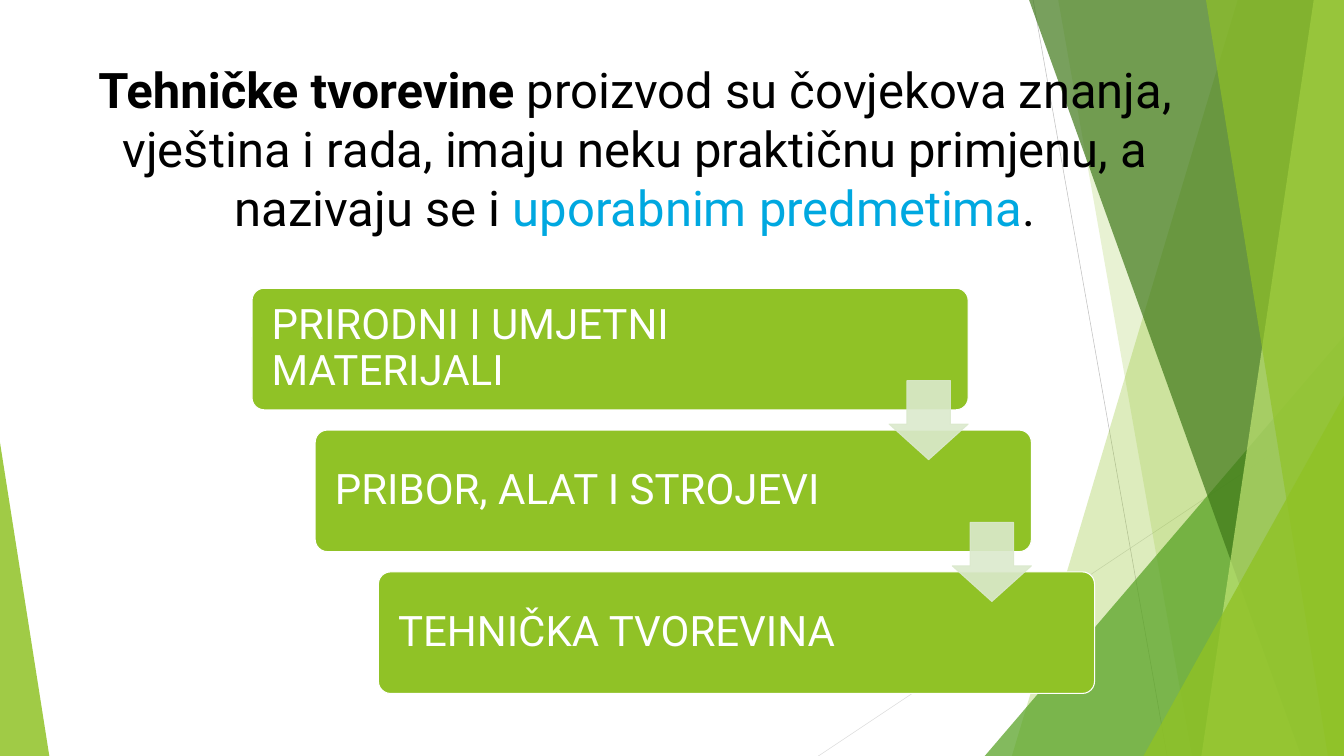
from lxml import etree
from pptx import Presentation
from pptx.dml.color import RGBColor
from pptx.enum.shapes import MSO_CONNECTOR, MSO_SHAPE
from pptx.enum.text import MSO_ANCHOR, MSO_AUTO_SIZE, PP_ALIGN
from pptx.oxml.ns import qn
from pptx.util import Inches, Pt

LINE = MSO_CONNECTOR.STRAIGHT
WEDGE = MSO_SHAPE.ISOSCELES_TRIANGLE
ROUND = MSO_SHAPE.ROUNDED_RECTANGLE
ARROW = MSO_SHAPE.DOWN_ARROW
MIDDLE, TOP = MSO_ANCHOR.MIDDLE, MSO_ANCHOR.TOP
LEFT, CENTER = PP_ALIGN.LEFT, PP_ALIGN.CENTER

WHITE = RGBColor(0xFF, 0xFF, 0xFF)
BLACK = RGBColor(0x00, 0x00, 0x00)
BLUE = RGBColor(0x00, 0xA8, 0xE0)
LIME = RGBColor(0x90, 0xC2, 0x26)
LEAF = RGBColor(0x54, 0xA0, 0x21)
MOSS = RGBColor(0x3F, 0x78, 0x19)
PALE = RGBColor(0xC0, 0xE4, 0x74)
MIST = RGBColor(0xDB, 0xE9, 0xCD)
GRAY = RGBColor(0xBF, 0xBF, 0xBF)
SILVER = RGBColor(0xD9, 0xD9, 0xD9)

FONT = "Roboto"
W, H = Inches(26.67), Inches(15)

# Rays: start x, start y, end x, end y in % of the box
RAYS = [(76.87, 0, 86.84, 100, GRAY), (100, 53.67, 60.89, 100, SILVER)]
# Facets reach the right edge: x at the top, x at the foot, colour, opacity
# Wedges stand on the foot: left, top, width, apex, colour, opacity
FACETS = [
    (92.09, 75.29, LIME, 30),
    (78.74, 88.68, LIME, 20),
    (73.27, 44.47, 26.73, 1, LEAF, 72),
    (76.57, 96.81, MOSS, 70),
    (97.75, 89.39, PALE, 70),
    (89.73, 98.8, LIME, 65),
    (85.08, 52.33, 14.92, 1, LIME, 80),
    (0, 58.53, 3.67, 0, LIME, 85),
]
CLAIM = [
    ("Tehničke tvorevine ", BLACK, True),
    ("proizvod su čovjekova znanja, vještina i rada, imaju neku praktičnu "
     "primjenu, a nazivaju se i ", BLACK, False),
    ("uporabnim predmetima", BLUE, False),
    (".", BLACK, False),
]
STEPS = ["PRIRODNI I UMJETNI MATERIJALI", "PRIBOR, ALAT I STROJEVI",
         "TEHNIČKA TVOREVINA"]


def part(box, x, y, w, h):
    """Return the part of a box that is given in % of its size."""
    left, top, wide, high = box
    return (int(left + wide * x / 100), int(top + high * y / 100),
            int(wide * w / 100), int(high * h / 100))


def paint(shape, color, alpha=100, edge=None):
    """Set fill and outline, both with the same opacity."""
    shape.shadow.inherit = False
    shape.fill.solid()
    shape.fill.fore_color.rgb = color
    if edge is None:
        shape.line.fill.background()
    else:
        shape.line.color.rgb = edge
        shape.line.width = Pt(1.5)
    if alpha < 100:
        for tint in shape._element.spPr.iter(qn("a:srgbClr")):
            etree.SubElement(tint, qn("a:alpha"), val=str(alpha * 1000))


def write(para, text, size, color, bold=False):
    run = para.add_run()
    run.text = text
    font = run.font
    font.name, font.size, font.bold = FONT, Pt(size), bold
    font.color.rgb = color


def draw_rays(shapes, box):
    for x1, y1, x2, y2, color in RAYS:
        start = part(box, x1, y1, 0, 0)[:2]
        end = part(box, x2, y2, 0, 0)[:2]
        ray = shapes.add_connector(LINE, *start, *end)
        ray.line.color.rgb = color
        ray.line.width = Pt(0.75)
        etree.SubElement(ray._element.spPr, qn("a:effectLst"))


def draw_facets(shapes, box):
    for *place, color, alpha in FACETS:
        if len(place) == 2:
            head, foot = place
            first, *rest = [part(box, x, y, 0, 0)[:2] for x, y in
                            ((head, 0), (100, 0), (100, 100), (foot, 100))]
            pen = shapes.build_freeform(*first)
            pen.add_line_segments(rest)
            facet = pen.convert_to_shape()
        else:
            x, y, w, apex = place
            facet = shapes.add_shape(WEDGE, *part(box, x, y, w, 100 - y))
            facet.adjustments[0] = apex
        paint(facet, color, alpha)


def place_claim(shapes, box):
    title = shapes.title
    shapes._spTree.append(title._element)  # in front of the facets
    title.left, title.top, title.width, title.height = box
    frame = title.text_frame
    frame.word_wrap = True
    frame.auto_size = MSO_AUTO_SIZE.NONE
    frame.vertical_anchor = TOP
    frame.margin_left = frame.margin_right = Inches(0.05)
    frame.margin_top = frame.margin_bottom = Inches(0.05)
    para = frame.paragraphs[0]
    para.alignment = CENTER
    para.line_spacing = 1.0
    for text, color, bold in CLAIM:
        write(para, text, 70, color, bold)


def draw_steps(shapes, box):
    """Draw a staircase of cards, then the arrows that join them."""
    cards = [part(box, 7.5 * i, 35 * i, 85, 30) for i in range(len(STEPS))]
    for text, (x, y, w, h) in zip(STEPS, cards):
        card = shapes.add_shape(ROUND, x, y, w, h)
        card.adjustments[0] = 0.1
        paint(card, LIME, edge=WHITE)
        frame = card.text_frame
        frame.word_wrap = True
        frame.vertical_anchor = MIDDLE
        frame.margin_left = Inches(0.32)
        frame.margin_right = int(w * 0.2)
        para = frame.paragraphs[0]
        para.alignment = LEFT
        para.line_spacing = 0.9
        write(para, text, 60, WHITE)
    for x, y, w, h in cards[:-1]:
        side = int(h * 0.65)
        arrow = shapes.add_shape(ARROW, x + w - side, y + int(h * 0.76),
                                 side, side)
        arrow.adjustments[0] = 0.55
        arrow.adjustments[1] = 0.45
        paint(arrow, MIST, 90, MIST)


def main():
    deck = Presentation()
    deck.slide_width, deck.slide_height = W, H
    slide = deck.slides.add_slide(deck.slide_layouts[5])
    shapes = slide.shapes
    page = (0, 0, W, H)
    draw_rays(shapes, page)
    draw_facets(shapes, page)
    place_claim(shapes, part(page, 2.96, 7.53, 88.6, 24.27))
    draw_steps(shapes, part(page, 18.75, 38.13, 62.69, 53.6))
    deck.save("out.pptx")


if __name__ == "__main__":
    main()
